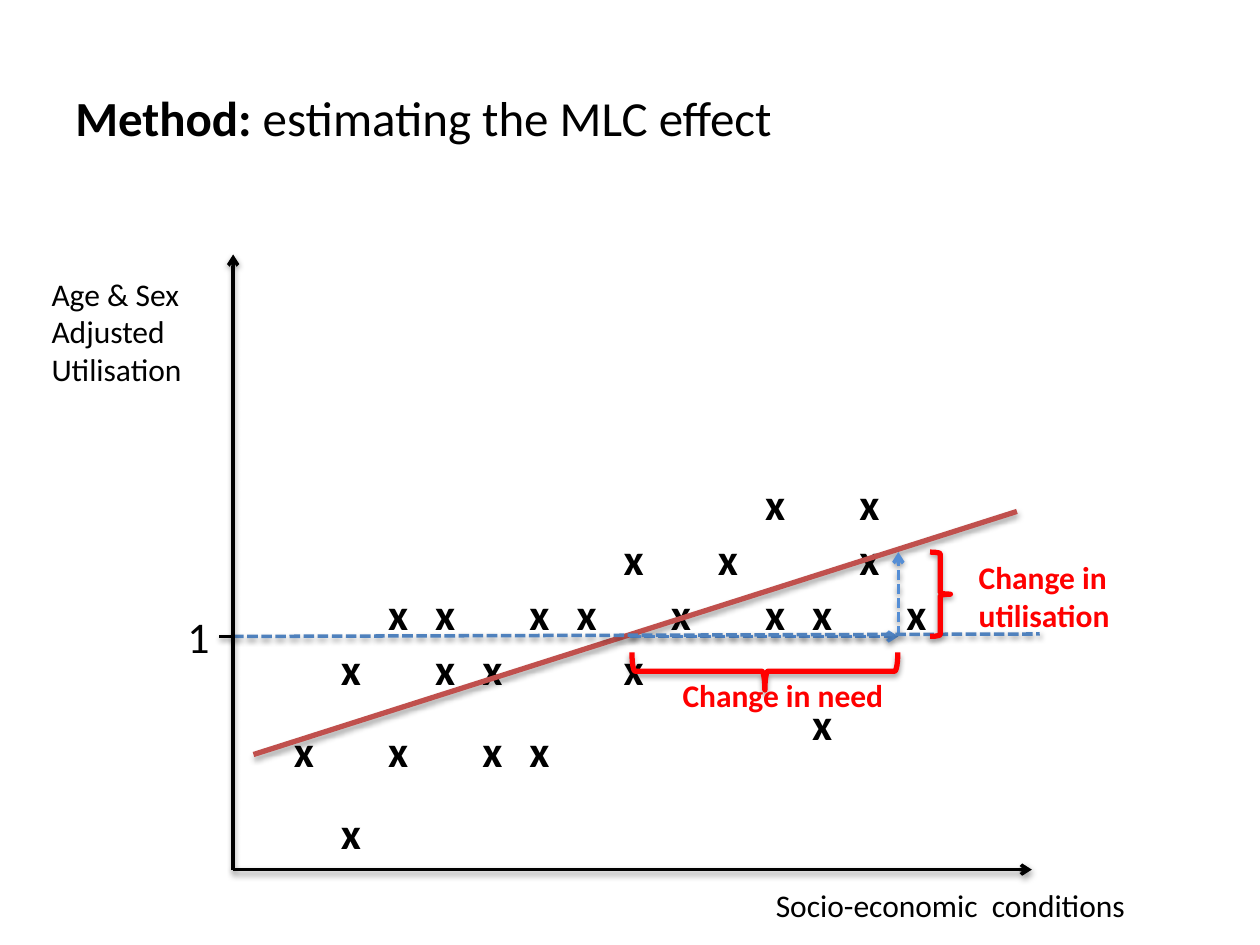
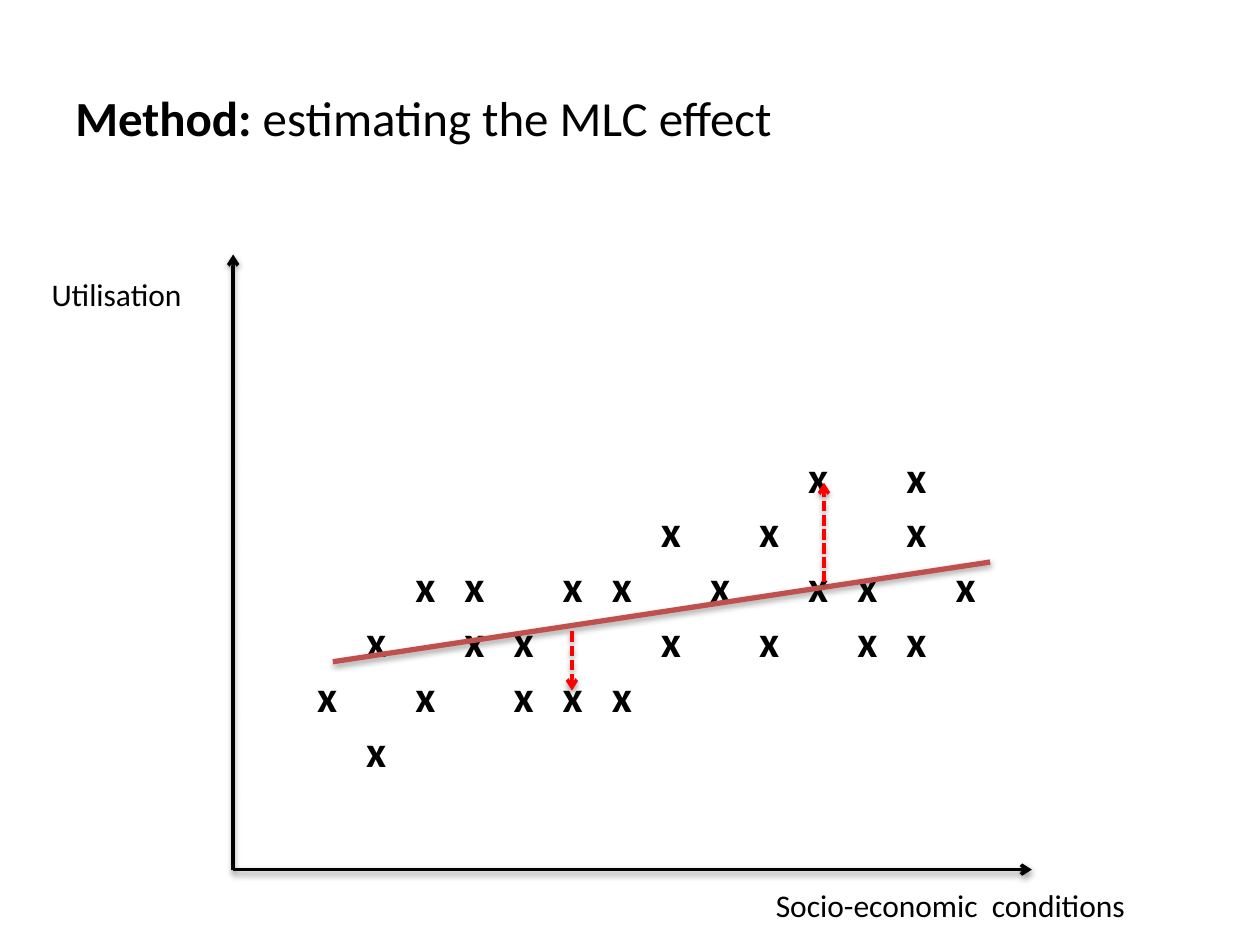
from pptx import Presentation
from pptx.dml.color import RGBColor
from pptx.enum.dml import MSO_LINE
from pptx.enum.shapes import MSO_CONNECTOR, MSO_SHAPE
from pptx.enum.text import MSO_ANCHOR, PP_ALIGN
from pptx.oxml import parse_xml
from pptx.oxml.ns import nsdecls
from pptx.util import Cm, Pt

STRAIGHT = MSO_CONNECTOR.STRAIGHT
DASH = MSO_LINE.SQUARE_DOT
LEFT, RIGHT = MSO_SHAPE.LEFT_BRACE, MSO_SHAPE.RIGHT_BRACE
TOP, MIDDLE = MSO_ANCHOR.TOP, MSO_ANCHOR.MIDDLE
CENTER = PP_ALIGN.CENTER

FONT = "Calibri"
COLORS = {"ink": "000000", "trend": "C0504D", "step": "558ED5",
          "base": "4F81BD", "mark": "FF0000"}
TITLE = ("Method:", " estimating the MLC effect")
X_LABEL = "Socio-economic  conditions"
ROW = 1.1
ORIGIN = (4.7, 17.53)
Y_END, X_END = (4.7, 5.13), (20.8, 17.53)

# Line styles: colour, width, dashed, arrow
STYLES = {
    "axis": ("ink", 2, False, True),
    "tick": ("ink", 2, False, False),
    "trend": ("trend", 3, False, False),
    "step": ("step", 2, True, True),
    "base": ("base", 2, True, False),
    "gap": ("mark", 2, True, True),
}

# Scatter rows: x sits mid-cell, ^ sits at the top of its cell.
# Lines: style, start, end.  Braces: shape, box, turn.
# Labels: text, box, size, colour, bold.
SLIDES = [
    {
        "at": (4.7, 9.63), "col": 0.95, "tall": {4: 2},
        "dots": ["...........x.x.",
                 "........x.x..x.",
                 "...xx.xx.x.xx.x",
                 "..x.xx..x......",
                 ".x.x.xx.....^..",
                 "..x............"],
        "y": "Age & Sex Adjusted Utilisation",
        "lines": [("trend", (5.11, 15.21), (20.5, 10.31)),
                  ("step", (12.7, 12.83), (18.11, 12.83)),
                  ("step", (18.11, 12.83), (18.11, 11.13)),
                  ("base", (4.7, 12.83), (20.96, 12.78)),
                  ("tick", (4.7, 12.83), (4.42, 12.83))],
        "braces": [(RIGHT, (18.75, 11.13, 0.41, 1.7), 0),
                   (LEFT, (15.04, 10.85, 0.76, 5.36), 270)],
        "labels": [("Change in need", (13.51, 13.51, 4.57, 1.02), 18, "mark", True),
                   ("Change in utilisation", (19.48, 11.13, 5.7, 1.8), 18, "mark", True),
                   ("1", (3.53, 12.17, 0.89, 1.32), 25, "ink", False)],
    },
    {
        "at": (6.1, 9.07), "col": 0.99, "tall": {},
        "dots": ["..........x.x.",
                 ".......x.x..x.",
                 "..xx.xx.x.xx.x",
                 ".x.xx..x.x.xx.",
                 "x.x.xxx.......",
                 ".x............"],
        "y": "Utilisation",
        "lines": [("trend", (6.71, 13.34), (19.96, 11.33)),
                  ("gap", (16.61, 11.73), (16.61, 9.73)),
                  ("gap", (11.53, 12.73), (11.53, 13.92))],
        "braces": [],
        "labels": [],
    },
]


def rgb(name):
    return RGBColor.from_string(COLORS[name])


def cms(box):
    return [Cm(n) for n in box]


def style(run, size, color="ink", bold=False):
    font = run.font
    font.name, font.size, font.bold = FONT, Pt(size), bold
    font.color.rgb = rgb(color)


def shade(shape):
    """Give a line or brace its soft shadow below."""
    shape._element.spPr.append(parse_xml(
        f'<a:effectLst {nsdecls("a")}>'
        '<a:outerShdw blurRad="40000" dist="22000" dir="5400000" rotWithShape="0">'
        '<a:srgbClr val="000000"><a:alpha val="36000"/></a:srgbClr>'
        '</a:outerShdw></a:effectLst>'))


def add_text(slide, text, box, size=18, color="ink", bold=False):
    frame = slide.shapes.add_textbox(*cms(box)).text_frame
    frame.word_wrap = True
    frame.text = text
    style(frame.paragraphs[0].runs[0], size, color, bold)
    return frame


def add_title(slide):
    head, rest = TITLE
    frame = add_text(slide, head, (1.27, 0.76, 22.86, 3.18), 28, bold=True)
    frame.vertical_anchor = MIDDLE
    run = frame.paragraphs[0].add_run()
    run.text = rest
    style(run, 28)


def add_line(slide, kind, start, end):
    color, width, dashed, arrow = STYLES[kind]
    shape = slide.shapes.add_connector(STRAIGHT, *cms(start + end))
    line = shape.line
    line.color.rgb, line.width = rgb(color), Pt(width)
    if dashed:
        line.dash_style = DASH
    if arrow:
        line._get_or_add_ln().append(
            parse_xml(f'<a:tailEnd {nsdecls("a")} type="arrow"/>'))
    shade(shape)


def add_brace(slide, kind, box, turn):
    shape = slide.shapes.add_shape(kind, *cms(box))
    shape.rotation = turn
    shape.fill.background()
    shape.line.color.rgb, shape.line.width = rgb("mark"), Pt(3)
    shade(shape)


def add_dots(slide, dots, at, col, tall):
    """Lay the scatter marks out in a table without fills."""
    rows, cols = len(dots), len(dots[0])
    high = ROW * (rows + sum(n - 1 for n in tall.values()))
    frame = slide.shapes.add_table(rows, cols, *cms((*at, col * cols, high)))
    table = frame.table
    table.first_row = table.horz_banding = False
    for part in table.columns:
        part.width = Cm(col)
    for r, marks in enumerate(dots):
        table.rows[r].height = Cm(ROW * tall.get(r, 1))
        for c, mark in enumerate(marks):
            cell = table.cell(r, c)
            cell.fill.background()
            cell.margin_left = cell.margin_right = cell.margin_top = Cm(0.03)
            cell.margin_bottom = 0
            if mark == ".":
                continue
            cell.vertical_anchor = TOP if mark == "^" else MIDDLE
            cell.text_frame.text = "x"
            para = cell.text_frame.paragraphs[0]
            para.alignment = CENTER
            style(para.runs[0], 25, bold=True)


def add_slide(deck, data):
    slide = deck.slides.add_slide(deck.slide_layouts[6])
    add_dots(slide, data["dots"], data["at"], data["col"], data["tall"])
    add_title(slide)
    for line in data["lines"]:
        add_line(slide, *line)
    for brace in data["braces"]:
        add_brace(slide, *brace)
    for label in data["labels"]:
        add_text(slide, *label)
    for end in (Y_END, X_END):
        add_line(slide, "axis", ORIGIN, end)
    add_text(slide, data["y"], (0.79, 5.41, 3.61, 1.02))
    add_text(slide, X_LABEL, (15.39, 17.73, 8, 1.02))


def main():
    deck = Presentation()
    deck.slide_width, deck.slide_height = Cm(25.4), Cm(19.05)
    for data in SLIDES:
        add_slide(deck, data)
    deck.save("out.pptx")


if __name__ == "__main__":
    main()
